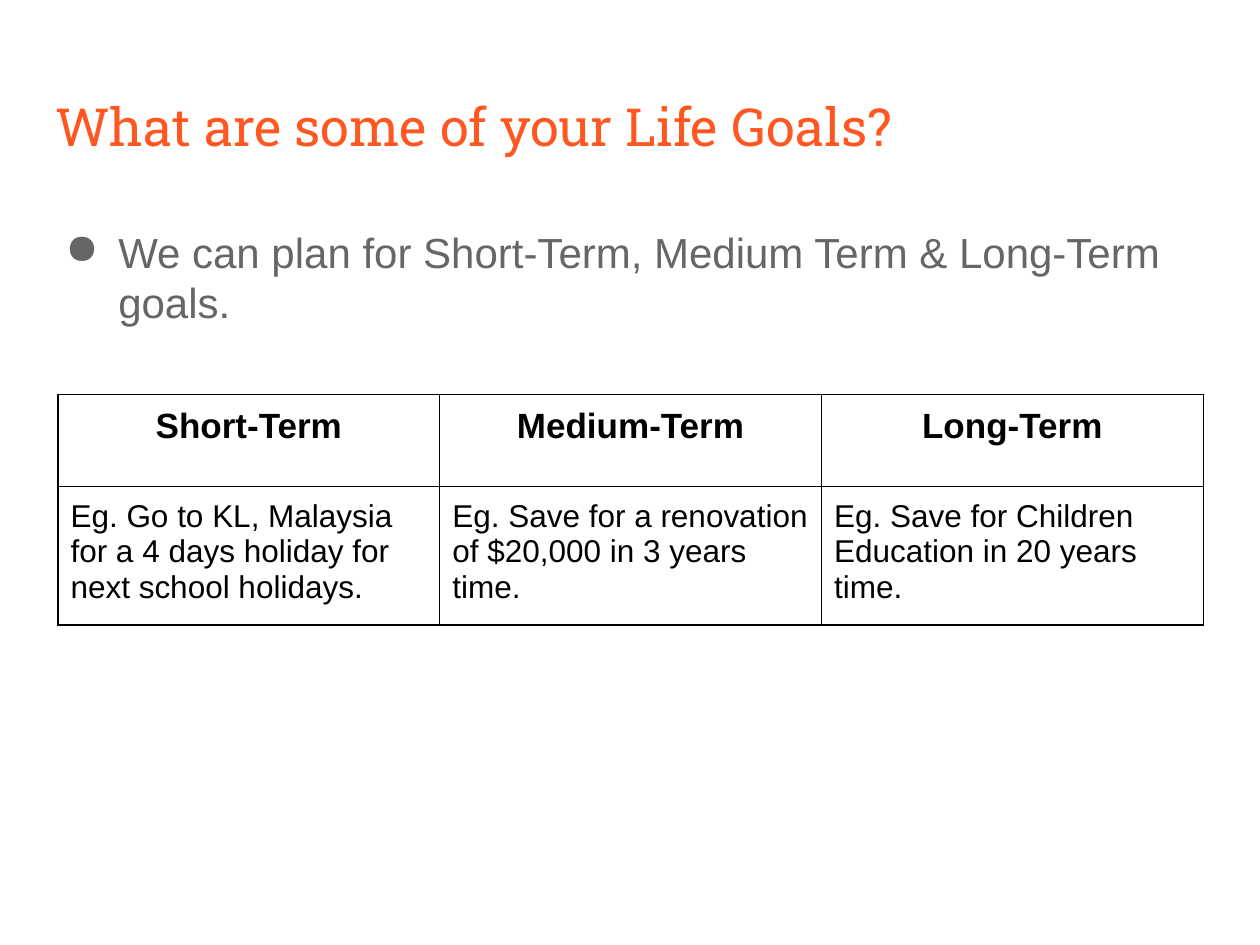
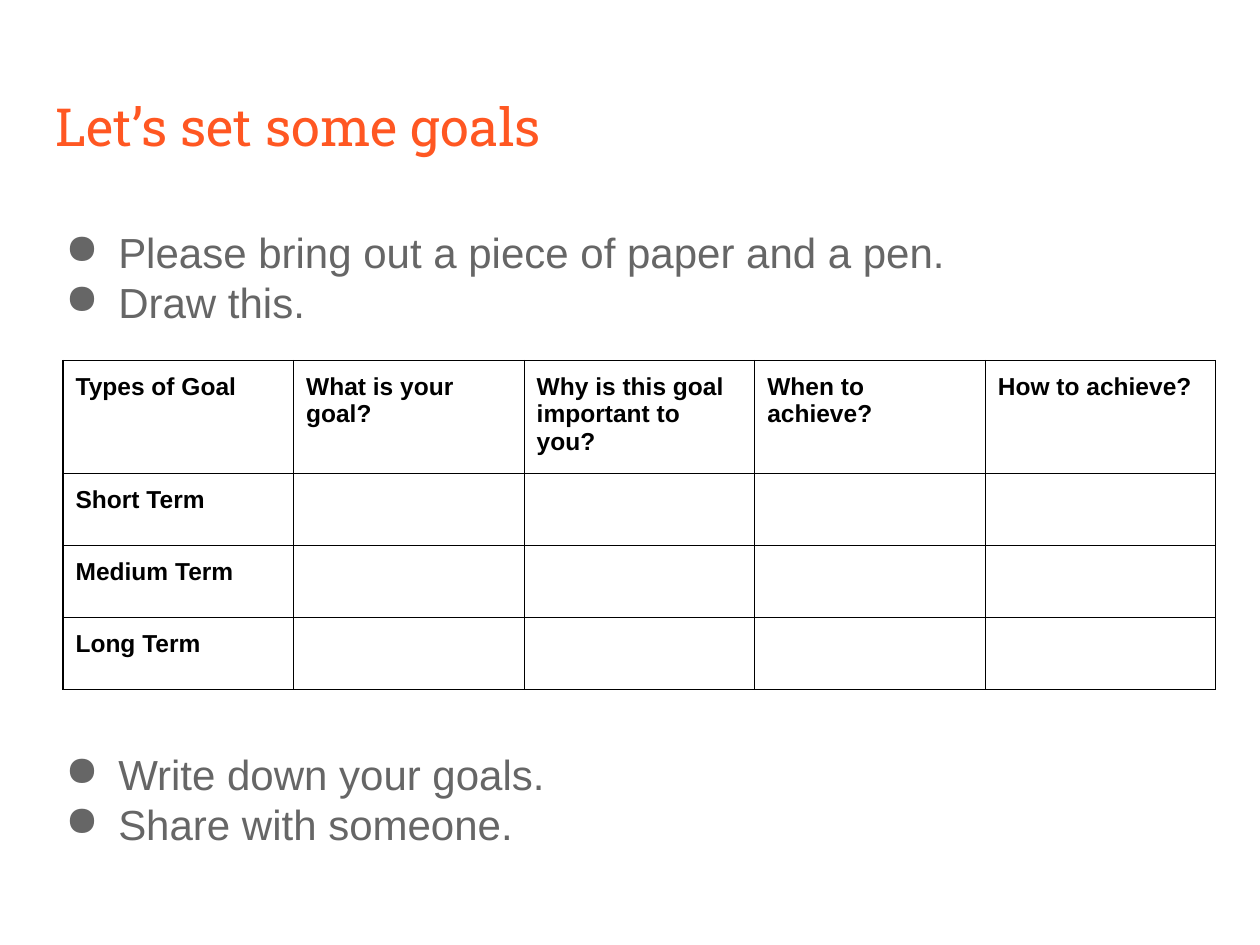
"""Builds two slides on planning and setting life goals."""
from dataclasses import dataclass

from lxml import etree
from pptx import Presentation
from pptx import util as u
from pptx.dml.color import RGBColor
from pptx.enum import text
from pptx.oxml.ns import qn


@dataclass(frozen=True)
class Style:
    size: int
    color: str
    font: str = "Arial"
    bold: bool = False
    align: text.PP_ALIGN = text.PP_ALIGN.LEFT


@dataclass(frozen=True)
class Theme:
    title: Style = Style(30, "FF5722", "Roboto Slab")
    body: Style = Style(24, "666666")
    term: Style = Style(20, "000000", bold=True, align=text.PP_ALIGN.CENTER)
    example: Style = Style(18, "000000")
    label: Style = Style(14, "000000", bold=True)
    border: str = "000000"
    border_width: float = 0.75
    background: str = "FFFFFF"
    body_pitch: float = 28.7
    left: float = 0.34
    width: float = 9.32
    inset: float = 0.1


@dataclass(frozen=True)
class Bullets:
    top: float
    lines: tuple[str, ...]


@dataclass(frozen=True)
class Grid:
    left: float
    top: float
    col_width: float
    row_heights: tuple[float, ...]
    rows: tuple[tuple[str, ...], ...]
    head: Style
    body: Style


@dataclass(frozen=True)
class GoalSlide:
    title: str
    bullets: tuple[Bullets, ...]
    grid: Grid


THEME = Theme()
SIDES = ("left", "right", "top", "bottom")

SLIDES = (
    GoalSlide(
        "What are some of your Life Goals?",
        (Bullets(1.7, ("We can plan for Short-Term, Medium Term & Long-Term goals.",)),),
        Grid(0.46, 3.13, 3.03, (0.73, 1.04), (
            ("Short-Term", "Medium-Term", "Long-Term"),
            ("Eg. Go to KL, Malaysia for a 4 days holiday for next school holidays.",
             "Eg. Save for a renovation of $20,000 in 3 years time.",
             "Eg. Save for Children Education in 20 years time."),
        ), THEME.term, THEME.example),
    ),
    GoalSlide(
        "Let’s set some goals",
        (Bullets(1.7, ("Please bring out a piece of paper and a pen.", "Draw this.")),
         Bullets(5.84, ("Write down your goals.", "Share with someone."))),
        Grid(0.5, 2.86, 1.83, (0.9, 0.57, 0.57, 0.57), (
            ("Types of Goal", "What is your goal?", "Why is this goal important to you?",
             "When to achieve?", "How to achieve?"),
            ("Short Term",), ("Medium Term",), ("Long Term",),
        ), THEME.label, THEME.label),
    ),
)


def set_all(obj, values: dict) -> None:
    """Set each named attribute on an object."""
    for name, value in values.items():
        setattr(obj, name, value)


def insets() -> dict:
    """Return the margins shared by text boxes and cells."""
    return {f"margin_{side}": u.Inches(THEME.inset) for side in SIDES}


def write(p, words: str, style: Style) -> None:
    """Write one styled run into a paragraph."""
    p.alignment = style.align
    r = p.add_run()
    r.text = words
    set_all(r.font, {"size": u.Pt(style.size), "name": style.font, "bold": style.bold})
    r.font.color.rgb = RGBColor.from_string(style.color)


def add_solid(parent, color: str) -> None:
    """Append a solid fill to a line element."""
    fill = etree.SubElement(parent, qn("a:solidFill"))
    etree.SubElement(fill, qn("a:srgbClr"), val=color)


def add_bullet(p, color: str) -> None:
    """Give a paragraph a round bullet and a hanging indent."""
    pPr = p._p.get_or_add_pPr()
    pPr.set("marL", str(u.Inches(0.5)))
    pPr.set("indent", str(u.Inches(-0.42)))
    tint = etree.SubElement(pPr, qn("a:buClr"))
    etree.SubElement(tint, qn("a:srgbClr"), val=color)
    etree.SubElement(pPr, qn("a:buChar"), char="●")


def add_box(slide, top: float, height: float):
    """Add a wrapping text box across the slide and return its frame."""
    sp = slide.shapes.add_textbox(u.Inches(THEME.left), u.Inches(top),
                                  u.Inches(THEME.width), u.Inches(height))
    tf = sp.text_frame
    set_all(tf, insets() | {"word_wrap": True, "vertical_anchor": text.MSO_ANCHOR.TOP})
    return tf


def add_bullets(slide, bullets: Bullets) -> None:
    """Add a block of bulleted lines."""
    tf = add_box(slide, bullets.top, 1)
    for i, line in enumerate(bullets.lines):
        p = tf.add_paragraph() if i else tf.paragraphs[0]
        p.line_spacing = u.Pt(THEME.body_pitch)
        write(p, line, THEME.body)
        add_bullet(p, THEME.body.color)


def frame_cell(cell) -> None:
    """Draw a thin border round an unfilled cell."""
    tcPr = cell._tc.get_or_add_tcPr()
    for tag in ("a:lnL", "a:lnR", "a:lnT", "a:lnB"):
        ln = etree.SubElement(tcPr, qn(tag), w=str(u.Pt(THEME.border_width)))
        add_solid(ln, THEME.border)
    cell.fill.background()


def add_grid(slide, grid: Grid) -> None:
    """Add a bordered table with equal columns."""
    n_rows, n_cols = len(grid.rows), len(grid.rows[0])
    table = slide.shapes.add_table(
        n_rows, n_cols, u.Inches(grid.left), u.Inches(grid.top),
        u.Inches(grid.col_width * n_cols), u.Inches(sum(grid.row_heights))).table
    set_all(table, {"first_row": False, "horz_banding": False})
    for col in table.columns:
        col.width = u.Inches(grid.col_width)
    for row, height in zip(table.rows, grid.row_heights):
        row.height = u.Inches(height)
    for cell in table.iter_cells():
        set_all(cell, insets())
        frame_cell(cell)
    for i, row in enumerate(grid.rows):
        for j, words in enumerate(row):
            style = grid.body if i else grid.head
            write(table.cell(i, j).text_frame.paragraphs[0], words, style)


def add_goal_slide(prs, content: GoalSlide) -> None:
    """Add a slide with its title, bullets and table."""
    slide = prs.slides.add_slide(prs.slide_layouts[6])
    fill = slide.background.fill
    fill.solid()
    fill.fore_color.rgb = RGBColor.from_string(THEME.background)
    write(add_box(slide, 0.65, 0.83).paragraphs[0], content.title, THEME.title)
    for bullets in content.bullets:
        add_bullets(slide, bullets)
    add_grid(slide, content.grid)


def main() -> None:
    """Build and save the presentation."""
    prs = Presentation()
    set_all(prs, {"slide_width": u.Inches(10), "slide_height": u.Inches(7.5)})
    for content in SLIDES:
        add_goal_slide(prs, content)
    prs.save("out.pptx")


if __name__ == "__main__":
    main()
